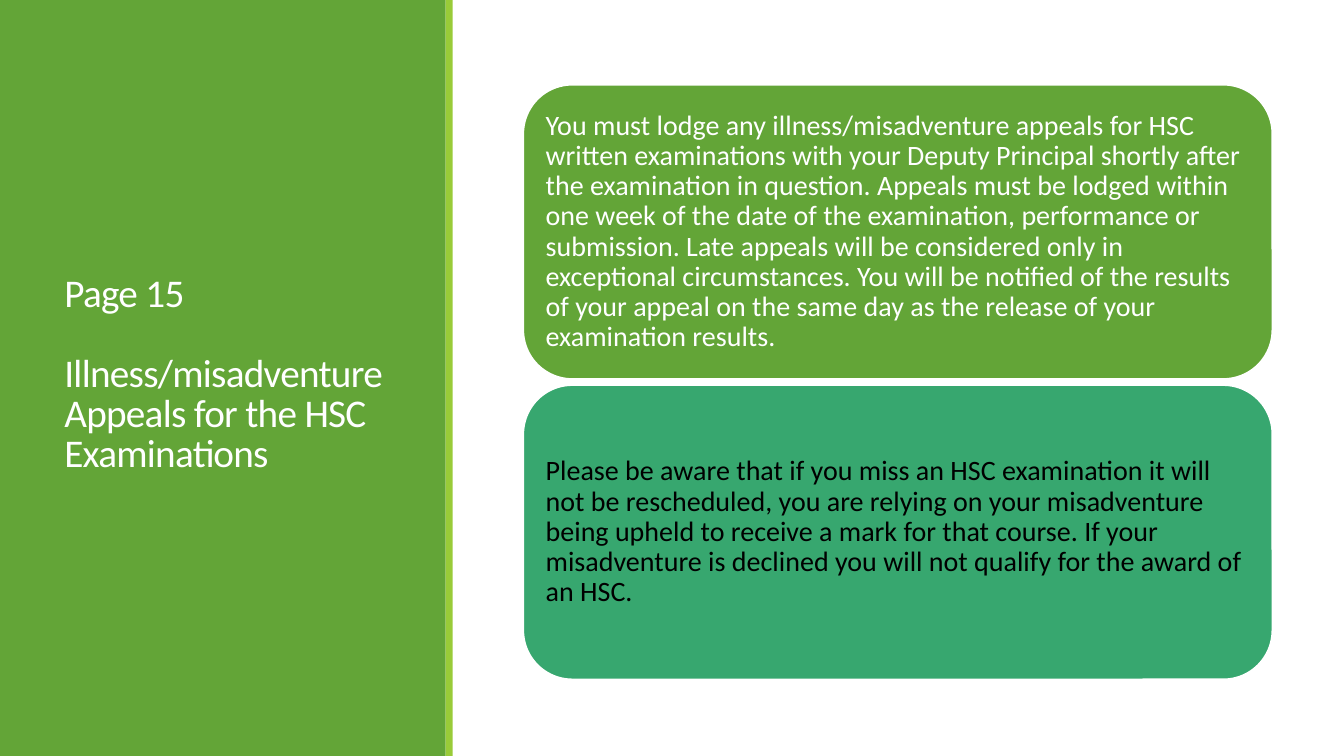
from dataclasses import dataclass

from pptx import Presentation
from pptx.dml.color import RGBColor
from pptx.enum.shapes import MSO_SHAPE
from pptx.enum.text import MSO_ANCHOR, PP_ALIGN
from pptx.util import Pt

RECTANGLE = MSO_SHAPE.RECTANGLE
ROUNDED = MSO_SHAPE.ROUNDED_RECTANGLE
MIDDLE = MSO_ANCHOR.MIDDLE
LEFT = PP_ALIGN.LEFT
EMU_PER_PX = 9144
BLANK_LAYOUT = 6


@dataclass(frozen=True)
class Theme:
    font: str = "Calibri"
    green: str = "63A537"
    lime: str = "99CB38"
    teal: str = "37A76F"
    white: str = "FFFFFF"
    black: str = "000000"
    title_size: int = 28
    body_size: int = 20
    tracking: int = -50
    outline: float = 1.25


@dataclass(frozen=True)
class Box:
    left: int
    top: int
    width: int
    height: int

    def emu(self):
        return [px * EMU_PER_PX for px in (self.left, self.top, self.width, self.height)]


THEME = Theme()
PAGE = Box(0, 0, 1333, 750)
SIDEBAR = Box(0, 0, 449, 750)
CARDS = Box(519, 84, 743, 590)

TITLE = ["Page 15", "Illness/misadventure Appeals for the HSC Examinations"]
NOTICES = [
    (
        "You must lodge any illness/misadventure appeals for HSC written examinations "
        "with your Deputy Principal shortly after the examination in question. Appeals "
        "must be lodged within one week of the date of the examination, performance or "
        "submission. Late appeals will be considered only in exceptional circumstances. "
        "You will be notified of the results of your appeal on the same day as the "
        "release of your examination results.",
        THEME.green,
        THEME.white,
    ),
    (
        "Please be aware that if you miss an HSC examination it will not be rescheduled, "
        "you are relying on your misadventure being upheld to receive a mark for that "
        "course. If your misadventure is declined you will not qualify for the award of "
        "an HSC.",
        THEME.teal,
        THEME.black,
    ),
]


def apply_format(target, values):
    for name, value in values.items():
        setattr(target, name, value)


def add_block(page, kind, box, fill, outline=None):
    shape = page.shapes.add_shape(kind, *box.emu())
    shape.shadow.inherit = False
    shape.fill.solid()
    shape.fill.fore_color.rgb = RGBColor.from_string(fill)
    if outline:
        shape.line.color.rgb = RGBColor.from_string(outline)
        shape.line.width = Pt(THEME.outline)
    else:
        shape.line.fill.background()
    return shape


def write_text(frame, texts, size, color, line_spacing, gap=0, inset=None):
    apply_format(frame, {"word_wrap": True, "vertical_anchor": MIDDLE})
    if inset is not None:
        sides = ("left", "top", "right", "bottom")
        apply_format(frame, {f"margin_{side}": inset * EMU_PER_PX for side in sides})
    spans = []
    for index, text in enumerate(texts):
        para = frame.add_paragraph() if index else frame.paragraphs[0]
        apply_format(para, {
            "alignment": LEFT,
            "line_spacing": line_spacing,
            "space_before": Pt(gap if index else 0),
        })
        span = para.add_run()
        span.text = text
        apply_format(span.font, {"name": THEME.font, "size": Pt(size)})
        span.font.color.rgb = RGBColor.from_string(color)
        spans.append(span)
    return spans


def add_sidebar(page, box):
    stripe = 7
    panel = Box(box.left, box.top, box.width - stripe, box.height)
    add_block(page, RECTANGLE, panel, THEME.green)
    edge = Box(box.left + panel.width, box.top, stripe, box.height)
    add_block(page, RECTANGLE, edge, THEME.lime)
    title_box = Box(box.left + 54, box.top + 57, 337, 631)
    title = page.shapes.add_textbox(*title_box.emu())
    spans = write_text(title.text_frame, TITLE, THEME.title_size, THEME.white, 0.85, gap=29)
    for span in spans:
        span.font._element.set("spc", str(THEME.tracking))


def add_cards(page, box):
    gap = 6
    height = (box.height - gap * (len(NOTICES) - 1)) // len(NOTICES)
    for index, (text, fill, color) in enumerate(NOTICES):
        card_box = Box(box.left, box.top + index * (height + gap), box.width, height)
        card = add_block(page, ROUNDED, card_box, fill, THEME.white)
        write_text(card.text_frame, [text], THEME.body_size, color, 0.9, inset=8)


def main():
    deck = Presentation()
    deck.slide_width = PAGE.width * EMU_PER_PX
    deck.slide_height = PAGE.height * EMU_PER_PX
    page = deck.slides.add_slide(deck.slide_layouts[BLANK_LAYOUT])
    add_sidebar(page, SIDEBAR)
    add_cards(page, CARDS)
    deck.save("out.pptx")


if __name__ == "__main__":
    main()
